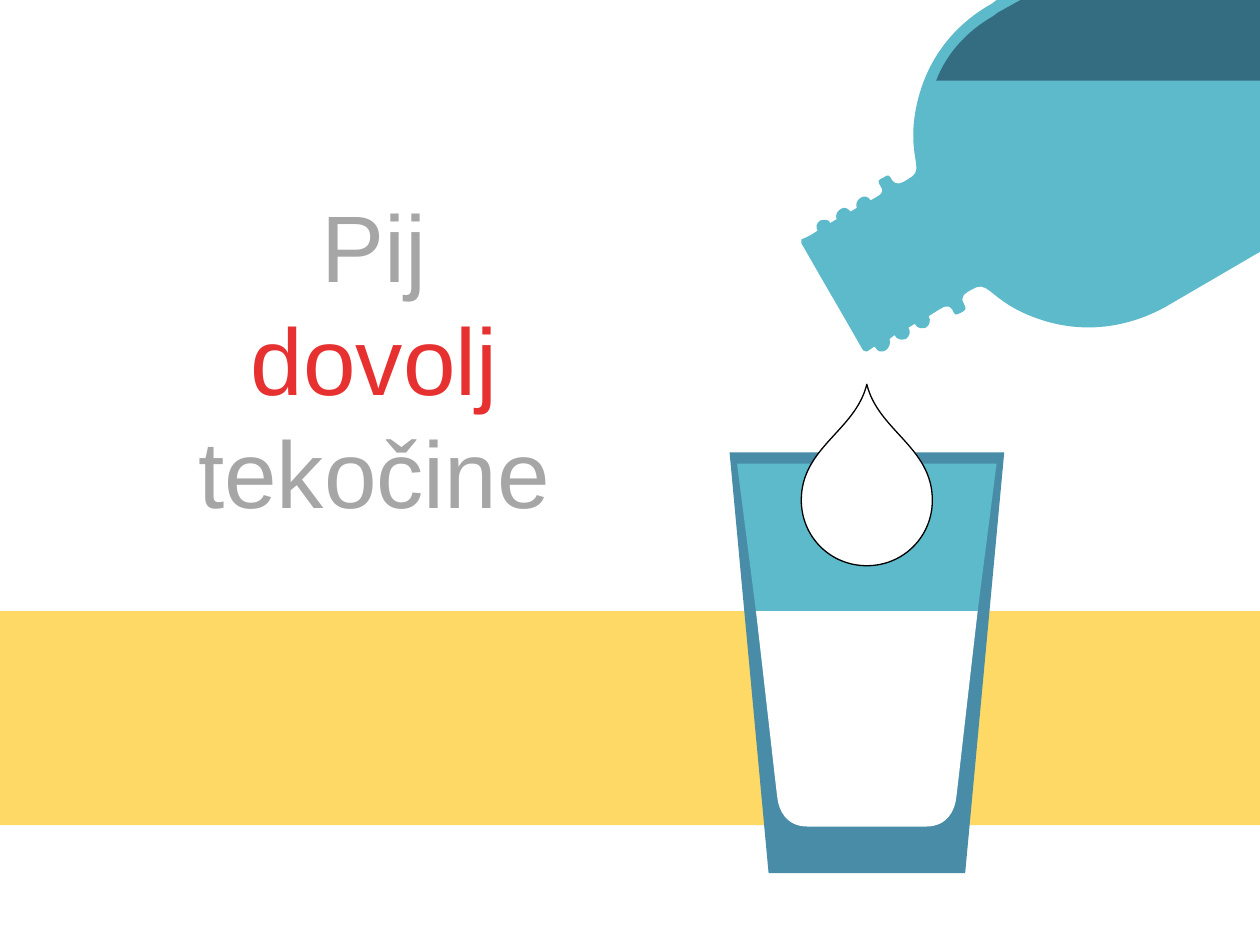
from lxml import etree
from pptx import Presentation, util as u
from pptx.dml.color import RGBColor
from pptx.enum import shapes, text
from pptx.oxml.ns import qn

COLUMNS, ROWS = 10, 7.5
COLORS = {
    "table": "FFD966", "glass": "488CA7", "water": "5DBACA", "clear": "FFFFFF",
    "shade": "346C81", "outline": "000000", "grey": "A6A6A6", "red": "E63130",
}


def pairs(step):
    """Split a step into its points: one for a line, three for a cubic curve."""
    return [step[i:i + 2] for i in range(0, len(step), 2)]


def mirror(half, axis):
    """Complete a left half with its reflection about a vertical axis."""
    flat = [(2 * axis - x, y) for step in half for x, y in pairs(step)][::-1]
    lengths = [len(pairs(step)) for step in half[:0:-1]]
    steps = [] if half[-1][-2] == axis else [flat[0]]
    used = 1
    for length in lengths:
        steps.append(sum(flat[used:used + length], ()))
        used += length
    return half + steps


class Poster:
    """Hold the slide, its grid and its style."""

    def __init__(self):
        self.deck = Presentation()
        self.deck.slide_width, self.deck.slide_height = u.Inches(10), u.Inches(7.5)
        self.slide = self.deck.slides.add_slide(self.deck.slide_layouts[6])
        self.column = self.deck.slide_width / COLUMNS
        self.row = self.deck.slide_height / ROWS

    def place(self, x, y):
        return round(x * self.column), round(y * self.row)

    def paint(self, shape, fill, line=None):
        shape.shadow.inherit = False
        shape.fill.solid()
        shape.fill.fore_color.rgb = RGBColor.from_string(COLORS[fill])
        if line:
            shape.line.color.rgb = RGBColor.from_string(COLORS[line])
            shape.line.width = u.Pt(0.75)
        else:
            shape.line.fill.background()

    def band(self, top, height, fill):
        bar = self.slide.shapes.add_shape(
            shapes.MSO_SHAPE.RECTANGLE, *self.place(0, top), *self.place(COLUMNS, height))
        self.paint(bar, fill)

    def outline(self, steps, fill, line=None):
        first, *rest = [self.place(*step[-2:]) for step in steps]
        builder = self.slide.shapes.build_freeform(*first)
        builder.add_line_segments(rest, close=True)
        shape = builder.convert_to_shape()
        self.bend(shape, steps)
        self.paint(shape, fill, line)

    def bend(self, shape, steps):
        segments = list(shape.element.iter(qn("a:lnTo")))
        for segment, step in zip(segments, steps[1:]):
            if len(step) == 2:
                continue
            curve = etree.Element(qn("a:cubicBezTo"))
            for point in pairs(step):
                x, y = self.place(*point)
                etree.SubElement(curve, qn("a:pt"),
                                 x=str(x - shape.left), y=str(y - shape.top))
            segment.getparent().replace(segment, curve)

    def slogan(self, x, y, width, height, paragraphs):
        box = self.slide.shapes.add_textbox(*self.place(x, y), *self.place(width, height))
        frame = box.text_frame
        frame.word_wrap = True
        frame.auto_size = text.MSO_AUTO_SIZE.SHAPE_TO_FIT_TEXT
        frame.text = "\n".join(words for words, _ in paragraphs)
        for paragraph, (_, colors) in zip(frame.paragraphs, paragraphs):
            paragraph.alignment = text.PP_ALIGN.CENTER
            for run, color in zip(paragraph.runs, colors):
                run.font.name, run.font.size = "Arial", u.Pt(54)
                run.font.color.rgb = RGBColor.from_string(COLORS[color])


def main():
    poster = Poster()
    table_top, center, edge = 4.85, 6.88, 12.28

    poster.band(table_top, 1.7, "table")
    poster.slogan(0.29, 1.44, 5.36, 2.83,
                  [("Pij", ["grey"]), ("dovolj\vtekočine", ["red", "grey"])])

    glass = [(5.79, 3.59), (6.1, 6.93)]
    upper_inside = [(5.85, 3.68), (6, table_top)]
    lower_inside = [(6, table_top), (6.08, 5.54, 6.16, 6.26, 6.17, 6.33),
                    (6.18, 6.43, 6.24, 6.56, 6.41, 6.56)]
    drop = [(center, 3.05), (6.79, 3.42, 6.36, 3.55, 6.36, 3.97),
            (6.36, 4.26, 6.59, 4.49, center, 4.49)]
    for half, fill, line in [(glass, "glass", None), (upper_inside, "water", None),
                             (lower_inside, "clear", None), (drop, "clear", "outline")]:
        poster.outline(mirror(half, center), fill, line)

    shoulder = [(7.91, 0), (7.87, 0.03), (7.55, 0.21, 7.34, 0.5, 7.27, 0.86),
                (7.2, 1.22, 7.33, 1.34, 7.24, 1.4), (7.14, 1.47, 7.11, 1.47, 7.08, 1.43),
                (7.06, 1.39, 7.05, 1.38, 7.01, 1.41), (6.97, 1.43, 6.96, 1.43, 6.99, 1.48),
                (7.02, 1.53, 7, 1.54, 6.91, 1.59)]
    upper_thread = [(6.89, 1.56, 6.86, 1.55, 6.83, 1.57), (6.8, 1.59, 6.79, 1.62, 6.8, 1.65),
                    (6.75, 1.68), (6.73, 1.65, 6.7, 1.64, 6.67, 1.66),
                    (6.64, 1.68, 6.63, 1.71, 6.64, 1.74), (6.59, 1.77),
                    (6.58, 1.74, 6.54, 1.74, 6.51, 1.75), (6.48, 1.77, 6.47, 1.8, 6.49, 1.83)]
    mouth = [(6.42, 1.88, 6.36, 1.9, 6.36, 1.9), (6.36, 1.93), (6.59, 2.33), (6.62, 2.38),
             (6.85, 2.78), (6.88, 2.79), (6.94, 2.75)]
    lower_thread = [(6.95, 2.76), (6.96, 2.79, 7, 2.8, 7.03, 2.78),
                    (7.06, 2.76, 7.07, 2.72, 7.06, 2.69), (7.1, 2.66),
                    (7.12, 2.7, 7.16, 2.7, 7.19, 2.69), (7.22, 2.67, 7.23, 2.63, 7.21, 2.6),
                    (7.26, 2.57), (7.28, 2.61, 7.32, 2.61, 7.35, 2.6),
                    (7.38, 2.58, 7.39, 2.54, 7.37, 2.51)]
    belly = [(7.51, 2.42, 7.52, 2.41, 7.56, 2.46), (7.58, 2.51, 7.59, 2.5, 7.63, 2.48),
             (7.67, 2.46, 7.67, 2.45, 7.65, 2.41), (7.62, 2.36, 7.64, 2.33, 7.75, 2.28),
             (7.85, 2.24, 7.89, 2.41, 8.24, 2.53), (8.58, 2.65, 8.94, 2.61, 9.26, 2.43),
             (10.22, 1.87), (11.88, 0.91), (edge, 0.69), (edge, 0)]
    poster.outline(shoulder + upper_thread + mouth + lower_thread + belly, "water")
    poster.outline([(8.1, 0), (7.92, 0.1), (7.88, 0.13),
                    (7.67, 0.25, 7.51, 0.43, 7.43, 0.64),
                    (12.18, 0.64), (edge, 0.58), (edge, 0)], "shade")

    poster.deck.save("out.pptx")


if __name__ == "__main__":
    main()
